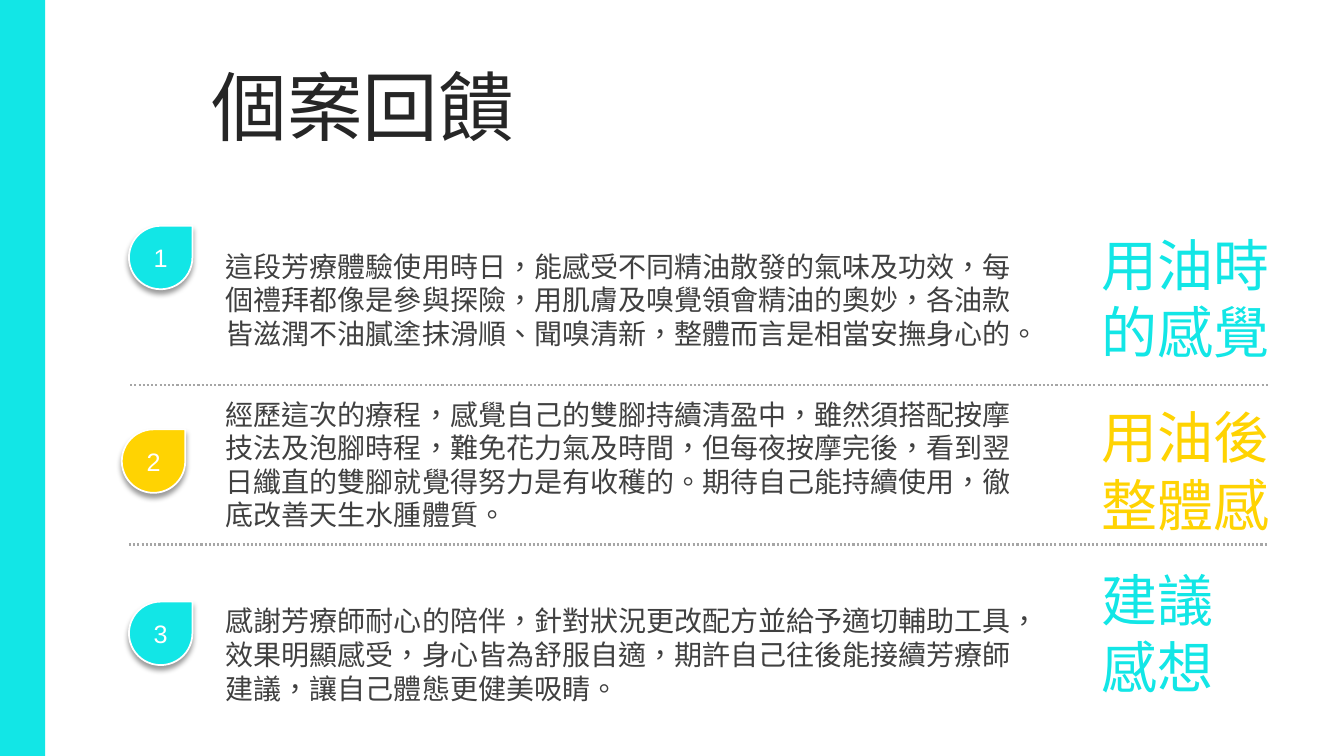
import dataclasses

import pptx
import pptx.dml.color
import pptx.enum.dml
import pptx.enum.lang
import pptx.enum.shapes
import pptx.enum.text
import pptx.oxml
import pptx.oxml.ns
import pptx.presentation
import pptx.shapes.autoshape
import pptx.slide
import pptx.text.text
import pptx.util

Cm = pptx.util.Cm
ShapeKind = pptx.enum.shapes.MSO_SHAPE
AutoSize = pptx.enum.text.MSO_AUTO_SIZE
Align = pptx.enum.text.PP_ALIGN
Anchor = pptx.enum.text.MSO_ANCHOR


@dataclasses.dataclass(frozen=True)
class Theme:
    aqua: str = "12E6E6"
    yellow: str = "FFD302"
    white: str = "FFFFFF"
    title_ink: str = "262626"
    story_ink: str = "404040"
    divider: str = "A6A6A6"
    latin_font: str = "Arial"
    story_font: str = "Noto Sans CJK SC"
    title_size: int = 54
    heading_size: int = 40
    story_size: int = 20
    marker_size: int = 18


@dataclasses.dataclass(frozen=True)
class Feedback:
    """One numbered row; lengths are centimetres."""
    number: int
    colour: str
    marker_left: float
    marker_top: float
    story_top: float
    story_height: float
    heading_top: float
    heading: tuple[str, ...]
    story: str


@dataclasses.dataclass(frozen=True)
class Divider:
    left: float
    top: float


THEME = Theme()
MARKER_SIDE = 1.6
STORY_LEFT, STORY_WIDTH = 5.44, 20.83
HEADING_LEFT, HEADING_WIDTH, HEADING_HEIGHT = 27.51, 4.83, 3.68
DIVIDER_LENGTH = 28.7
DIVIDERS = (Divider(3.28, 9.7), Divider(3.25, 13.72))
FEEDBACKS = (
    Feedback(1, THEME.aqua, 3.25, 5.69, 6.15, 2.82, 5.69, ("用油時的感覺",),
             "這段芳療體驗使用時日，能感受不同精油散發的氣味及功效，每個禮拜都像是參與探險，"
             "用肌膚及嗅覺領會精油的奧妙，各油款皆滋潤不油膩塗抹滑順、聞嗅清新，"
             "整體而言是相當安撫身心的。"),
    Feedback(2, THEME.yellow, 3.07, 10.82, 9.88, 3.68, 10.03, ("用油後", "整體感"),
             "經歷這次的療程，感覺自己的雙腳持續清盈中，雖然須搭配按摩技法及泡腳時程，"
             "難免花力氣及時間，但每夜按摩完後，看到翌日纖直的雙腳就覺得努力是有收穫的。"
             "期待自己能持續使用，徹底改善天生水腫體質。"),
    Feedback(3, THEME.aqua, 3.25, 15.16, 15.09, 2.82, 14.12, ("建議", "感想"),
             "感謝芳療師耐心的陪伴，針對狀況更改配方並給予適切輔助工具，效果明顯感受，"
             "身心皆為舒服自適，期許自己往後能接續芳療師建議，讓自己體態更健美吸睛。"),
)
MARKER_SHADOW = (
    f'<a:outerShdw {pptx.oxml.ns.nsdecls("a")} blurRad="50800" dist="38100" '
    'dir="5400000" algn="t" rotWithShape="0"><a:srgbClr val="000000">'
    '<a:alpha val="40000"/></a:srgbClr></a:outerShdw>'
)


def rgb(colour: str) -> pptx.dml.color.RGBColor:
    return pptx.dml.color.RGBColor.from_string(colour)


def add_span(para: pptx.text.text._Paragraph, text: str, size: int, colour: str,
             font_name: str = THEME.latin_font) -> None:
    span = para.add_run()
    span.text = text
    span.font.size = pptx.util.Pt(size)
    span.font.name = font_name
    span.font.color.rgb = rgb(colour)
    span.font.language_id = pptx.enum.lang.MSO_LANGUAGE_ID.TRADITIONAL_CHINESE
    if font_name != THEME.latin_font:
        east_asian = pptx.oxml.parse_xml(
            f'<a:ea {pptx.oxml.ns.nsdecls("a")} typeface="{font_name}"/>')
        span.font._element.append(east_asian)


def add_shape(page: pptx.slide.Slide, kind: ShapeKind, left: float, top: float,
              width: float, height: float, colour: str) -> pptx.shapes.autoshape.Shape:
    shape = page.shapes.add_shape(kind, Cm(left), Cm(top), Cm(width), Cm(height))
    shape.shadow.inherit = False
    shape.fill.solid()
    shape.fill.fore_color.rgb = rgb(colour)
    shape.line.fill.background()
    return shape


def add_text(page: pptx.slide.Slide, left: float, top: float, width: float, height: float,
             lines: tuple[str, ...], size: int, colour: str, font_name: str) -> None:
    box = page.shapes.add_textbox(Cm(left), Cm(top), Cm(width), Cm(height))
    frame = box.text_frame
    frame.word_wrap = True
    frame.auto_size = AutoSize.SHAPE_TO_FIT_TEXT
    for index, line in enumerate(lines):
        para = frame.add_paragraph() if index else frame.paragraphs[0]
        add_span(para, line, size, colour, font_name)


def add_title(page: pptx.slide.Slide, text: str) -> None:
    title = page.shapes.title
    title.left, title.top, title.width, title.height = Cm(5.08), Cm(1.78), Cm(27.74), Cm(2.01)
    frame = title.text_frame
    frame.auto_size = AutoSize.NONE
    frame.vertical_anchor = Anchor.MIDDLE
    para = frame.paragraphs[0]
    para.alignment = Align.LEFT
    para.line_spacing = 0.9
    add_span(para, text, THEME.title_size, THEME.title_ink)


def add_divider(page: pptx.slide.Slide, divider: Divider) -> None:
    line = page.shapes.add_connector(
        pptx.enum.shapes.MSO_CONNECTOR.STRAIGHT, Cm(divider.left), Cm(divider.top),
        Cm(divider.left + DIVIDER_LENGTH), Cm(divider.top))
    line.line.color.rgb = rgb(THEME.divider)
    line.line.width = pptx.util.Pt(1.5)
    line.line.dash_style = pptx.enum.dml.MSO_LINE.ROUND_DOT
    line._element.spPr.append(
        pptx.oxml.parse_xml(f'<a:effectLst {pptx.oxml.ns.nsdecls("a")}/>'))


def add_marker(page: pptx.slide.Slide, feedback: Feedback) -> None:
    """Draw the numbered drop with its soft shadow."""
    drop = add_shape(page, ShapeKind.TEAR, feedback.marker_left, feedback.marker_top,
                     MARKER_SIDE, MARKER_SIDE, feedback.colour)
    drop.line.color.rgb = rgb(THEME.white)
    drop.line.width = pptx.util.Pt(1.25)
    effects = drop._element.spPr.find(pptx.oxml.ns.qn("a:effectLst"))
    effects.append(pptx.oxml.parse_xml(MARKER_SHADOW))
    frame = drop.text_frame
    frame.vertical_anchor = Anchor.MIDDLE
    para = frame.paragraphs[0]
    para.alignment = Align.CENTER
    add_span(para, str(feedback.number), THEME.marker_size, THEME.white)


def add_feedback(page: pptx.slide.Slide, feedback: Feedback) -> None:
    add_marker(page, feedback)
    add_text(page, STORY_LEFT, feedback.story_top, STORY_WIDTH, feedback.story_height,
             (feedback.story,), THEME.story_size, THEME.story_ink, THEME.story_font)
    add_text(page, HEADING_LEFT, feedback.heading_top, HEADING_WIDTH, HEADING_HEIGHT,
             feedback.heading, THEME.heading_size, feedback.colour, THEME.latin_font)


def main() -> None:
    deck: pptx.presentation.Presentation = pptx.Presentation()
    deck.slide_width, deck.slide_height = Cm(33.87), Cm(19.05)
    title_only = deck.slide_layouts.get_by_name("Title Only")
    page = deck.slides.add_slide(title_only)
    add_shape(page, ShapeKind.RECTANGLE, 0, 0, 1.14, 19.05, THEME.aqua)
    add_title(page, "個案回饋")
    for divider in DIVIDERS:
        add_divider(page, divider)
    for feedback in FEEDBACKS:
        add_feedback(page, feedback)
    deck.save("out.pptx")


if __name__ == "__main__":
    main()
